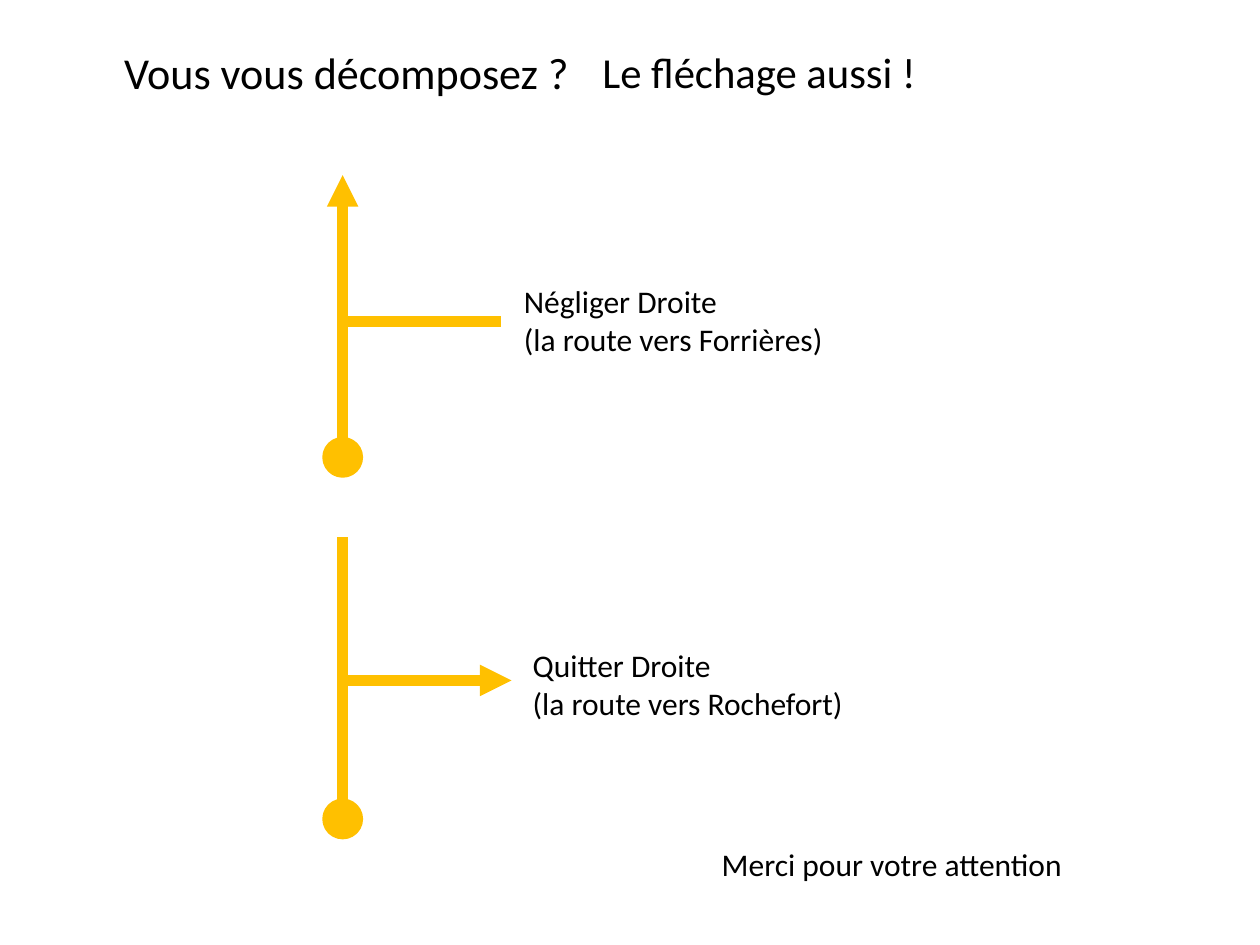
from lxml import etree
from pptx import Presentation
from pptx.dml.color import RGBColor
from pptx.enum.shapes import MSO_CONNECTOR as Connector, MSO_SHAPE as Shape
from pptx.enum.text import MSO_ANCHOR as Anchor, MSO_AUTO_SIZE as AutoSize, PP_ALIGN as Align
from pptx.oxml.ns import qn
from pptx.util import Inches, Pt

YELLOW = "FFC000"
BLACK = "000000"
LINE_WIDTH = 6
DOT = 0.24
STEM_X = 2.72


def color(value):
    return RGBColor.from_string(value)


def add_text(page, text, left, top, width, height, size=18, align=Align.LEFT,
             anchor=Anchor.TOP, wrap=True, grow=True):
    box = page.shapes.add_textbox(Inches(left), Inches(top), Inches(width), Inches(height))
    frame = box.text_frame
    frame.word_wrap = wrap
    frame.auto_size = AutoSize.SHAPE_TO_FIT_TEXT if grow else AutoSize.NONE
    frame.vertical_anchor = anchor
    para = frame.paragraphs[0]
    para.alignment = align
    for index, line in enumerate(text.split("\n")):
        if index:
            para.add_line_break()
        span = para.add_run()
        span.text = line
        span.font.name = "Calibri"
        span.font.size = Pt(size)
        span.font.color.rgb = color(BLACK)


def add_title(page, text, left, width, size):
    add_text(page, text, left, 0.3, width, 0.54, size=size,
             align=Align.CENTER, anchor=Anchor.MIDDLE, grow=False)


def add_line(group, start, end, arrow=False):
    points = [Inches(value) for value in (*start, *end)]
    line = group.shapes.add_connector(Connector.STRAIGHT, *points)
    line.line.color.rgb = color(YELLOW)
    line.line.width = Pt(LINE_WIDTH)
    if arrow:
        etree.SubElement(line.line._get_or_add_ln(), qn("a:tailEnd"), type="triangle")
    etree.SubElement(line._element.spPr, qn("a:effectLst"))


def add_dot(group, top):
    dot = group.shapes.add_shape(Shape.OVAL, Inches(STEM_X - DOT / 2), Inches(top),
                                 Inches(DOT), Inches(DOT))
    dot.shadow.inherit = False
    dot.fill.solid()
    dot.fill.fore_color.rgb = color(YELLOW)
    dot.line.color.rgb = color(YELLOW)
    dot.line.width = Pt(LINE_WIDTH)


def add_junction(page, stem_top, stem_bottom, branch_y, branch_end, dot_top, turn):
    """Road sign: the arrow is on the branch when turning, else on the stem."""
    group = page.shapes.add_group_shape()
    add_line(group, (STEM_X, stem_bottom), (STEM_X, stem_top), arrow=not turn)
    add_line(group, (STEM_X, branch_y), (branch_end, branch_y), arrow=turn)
    add_dot(group, dot_top)


def main():
    deck = Presentation()
    deck.slide_width, deck.slide_height = Inches(10), Inches(7.5)
    page = deck.slides.add_slide(deck.slide_layouts[6])

    # Heading in two parts
    add_title(page, "Vous vous décomposez ?", 0.5, 4.5, 25.2)
    add_title(page, "Le fléchage aussi !", 4.45, 3.15, 24.4)

    # Junction signs: straight on, then right turn
    add_junction(page, 1.39, 3.67, 2.55, 3.98, 3.51, turn=False)
    add_junction(page, 4.26, 6.62, 5.4, 4.06, 6.38, turn=True)

    # Captions and closing words
    add_text(page, "Négliger Droite\n(la route vers Forrières)", 4.06, 2.19, 2.66, 0.71)
    add_text(page, "Quitter Droite\n(la route vers Rochefort)", 4.13, 5.08, 3.23, 0.71)
    add_text(page, "Merci pour votre attention", 5.63, 6.66, 3, 0.4, wrap=False)

    deck.save("out.pptx")


if __name__ == "__main__":
    main()
